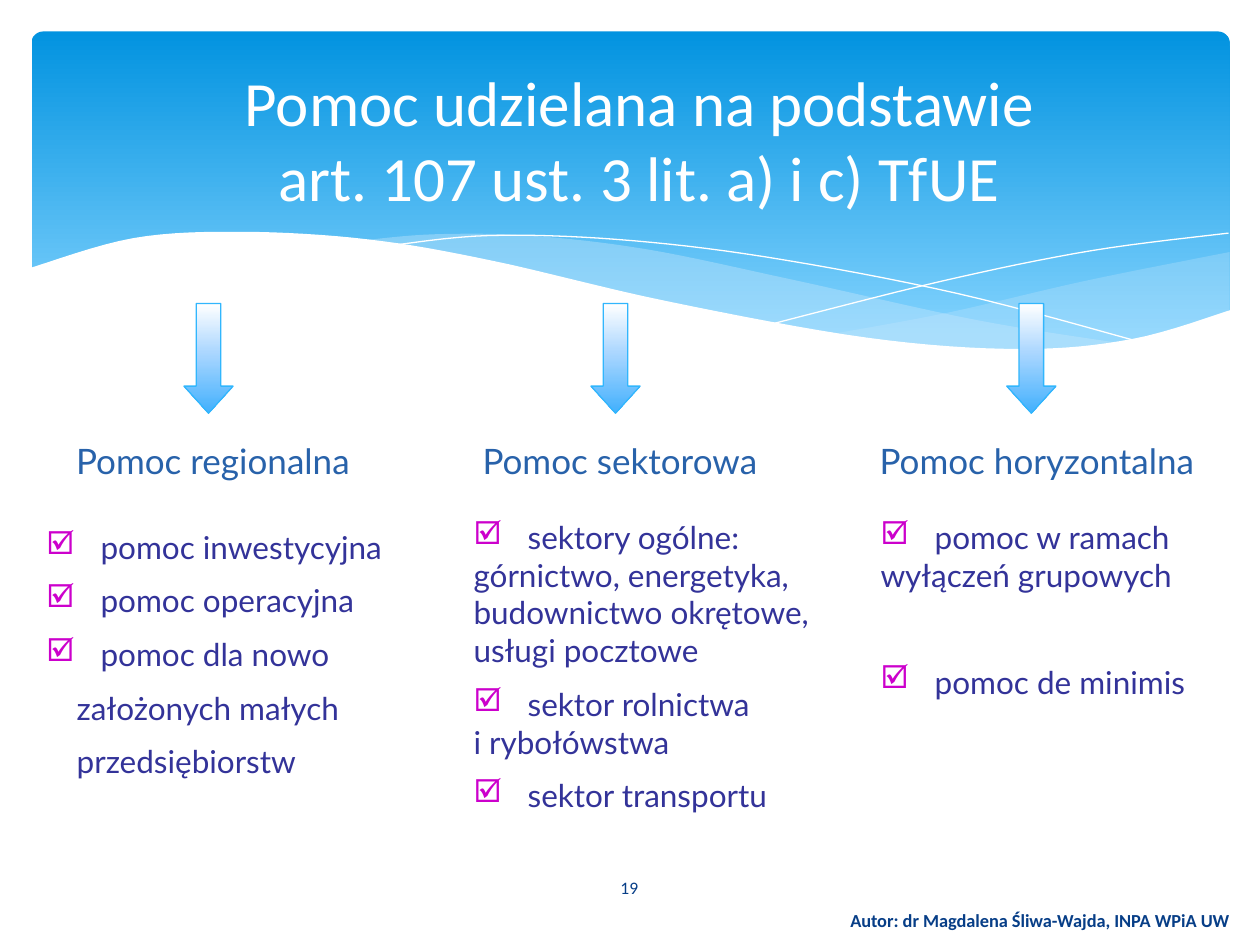
from dataclasses import dataclass
from typing import Optional

from lxml import etree
from pptx import Presentation
from pptx.dml.color import RGBColor
from pptx.enum.shapes import MSO_SHAPE
from pptx.enum.text import MSO_ANCHOR, PP_ALIGN
from pptx.oxml.ns import qn
from pptx.util import Inches, Pt

CENTER, LEFT = PP_ALIGN.CENTER, PP_ALIGN.LEFT
MIDDLE, TOP = MSO_ANCHOR.MIDDLE, MSO_ANCHOR.TOP
ROUNDED, DOWN_ARROW = MSO_SHAPE.ROUNDED_RECTANGLE, MSO_SHAPE.DOWN_ARROW
CURVE_STEPS = 8


@dataclass(frozen=True)
class Theme:
    white: str = "FFFFFF"
    wave: str = "C6E7FC"
    navy: str = "073E87"
    heading: str = "2862AA"
    body: str = "333399"
    check: str = "CC00CC"
    arrow_line: str = "31B6FD"
    banner: tuple = ((0, "0293E0"), (90, "83D3FE"))
    arrow: tuple = ((0, "FFFFFF"), (44, "ACD7FF"), (100, "42B0FD"))
    title_size: float = 36
    heading_size: float = 20
    body_size: float = 18
    author_size: float = 10.5
    number_size: float = 10
    main_font: str = "Calibri"
    list_font: str = "Lato"


@dataclass(frozen=True)
class Wave:
    """Smooth edges through knots in inches; opacity is a percentage."""
    edges: tuple
    fill: Optional[str] = None
    opacity: int = 100


@dataclass(frozen=True)
class Item:
    text: str
    checked: bool = True
    before: float = 9


@dataclass(frozen=True)
class Column:
    heading: str
    heading_left: float
    heading_width: float
    arrow_left: float
    list_left: float
    list_top: float
    list_width: float
    items: tuple


THEME = Theme()

WAVES = (
    Wave((((9.76, 2), (8.61, 2.23), (7.53, 2.48), (6.61, 2.65)),
          ((6.61, 2.65), (7.45, 2.75), (8.35, 2.77), (9.13, 2.67), (9.76, 2.47))),
         THEME.wave, 29),
    Wave((((8.93, 2.73), (7.75, 2.54), (6.29, 2.22), (5.14, 1.98), (4.2, 1.87), (3.44, 1.86),
           (2.86, 1.91)),
          ((2.86, 1.91), (4.04, 2.11), (5.66, 2.48), (6.95, 2.7), (7.96, 2.78), (8.93, 2.73))),
         THEME.wave, 40),
    Wave((((3.09, 1.95), (3.87, 1.87), (4.89, 1.9), (6.08, 2.04), (7.6, 2.33), (9.07, 2.72)),)),
    Wave((((6.13, 2.57), (7.48, 2.23), (8.66, 1.99), (9.75, 1.85)),)),
    Wave((((9.77, 2.46), (8.99, 2.69), (8.09, 2.77), (6.88, 2.68), (5.29, 2.39), (3.91, 2.07),
           (2.92, 1.9), (1.93, 1.84), (1.06, 1.89), (0.23, 2.13)),
          ((0.23, 3.29), (9.77, 3.29))), THEME.white),
)

COLUMNS = (
    Column("Pomoc regionalna", 0.35, 2.68, 1.46, 0.27, 4.14, 4.25, (
        Item("pomoc inwestycyjna"),
        Item("pomoc operacyjna"),
        Item("pomoc dla nowo"),
        Item("założonych małych", checked=False),
        Item("przedsiębiorstw", checked=False))),
    Column("Pomoc sektorowa", 3.66, 2.52, 4.69, 3.66, 4.06, 2.91, (
        Item("sektory ogólne: górnictwo, energetyka, budownictwo okrętowe, usługi pocztowe"),
        Item("sektor rolnictwa\ni rybołówstwa"),
        Item("sektor transportu"))),
    Column("Pomoc horyzontalna", 6.81, 2.84, 7.99, 6.89, 4.06, 2.84, (
        Item("pomoc w ramach wyłączeń grupowych"),
        Item("pomoc de minimis", before=39.6))),
)


def rgb(color: str) -> RGBColor:
    return RGBColor.from_string(color)


def set_gradient(shape, stops: tuple) -> None:
    """Top-to-bottom gradient with any number of stops."""
    shape.fill.gradient()
    shape.fill.gradient_angle = 270
    stop_list = shape.element.spPr.find(".//" + qn("a:gsLst"))
    for old in list(stop_list):
        stop_list.remove(old)
    for percent, color in stops:
        stop = etree.SubElement(stop_list, qn("a:gs"), pos=str(percent * 1000))
        etree.SubElement(stop, qn("a:srgbClr"), val=color)


def smooth(knots: tuple) -> list:
    """Points of a Catmull-Rom curve through the knots, in slide units."""
    padded = (knots[0], *knots, knots[-1])
    points = [tuple(Inches(value) for value in knots[0])]
    for before, start, end, after in zip(padded, padded[1:], padded[2:], padded[3:]):
        for step in range(1, CURVE_STEPS + 1):
            t = step / CURVE_STEPS
            points.append(tuple(
                Inches(b + ((c - a) * t + (2 * a - 5 * b + 4 * c - d) * t ** 2
                            + (3 * b - a - 3 * c + d) * t ** 3) / 2)
                for a, b, c, d in zip(before, start, end, after)))
    return points


def draw_wave(page, wave: Wave) -> None:
    points = [point for edge in wave.edges for point in smooth(edge)]
    builder = page.shapes.build_freeform(*points[0])
    builder.add_line_segments(points[1:], close=wave.fill is not None)
    shape = builder.convert_to_shape()
    shape.shadow.inherit = False
    if wave.fill is None:
        shape.fill.background()
        shape.line.color.rgb = rgb(THEME.white)
        shape.line.width = Pt(0)
        return
    shape.line.fill.background()
    shape.fill.solid()
    shape.fill.fore_color.rgb = rgb(wave.fill)
    if wave.opacity < 100:
        color = shape.element.spPr.find(qn("a:solidFill")).find(qn("a:srgbClr"))
        etree.SubElement(color, qn("a:alpha"), val=str(wave.opacity * 1000))


def draw_preset(page, kind, left: float, top: float, width: float, height: float, stops: tuple):
    shape = page.shapes.add_shape(kind, Inches(left), Inches(top), Inches(width), Inches(height))
    shape.shadow.inherit = False
    set_gradient(shape, stops)
    shape.line.fill.background()
    return shape


def add_text(para, text: str, size: float, color: str, font: str, bold: bool = False) -> None:
    for index, line in enumerate(text.split("\n")):
        if index:
            para.add_line_break()
        span = para.add_run()
        span.text = line
        span.font.size, span.font.name, span.font.bold = Pt(size), font, bold
        span.font.color.rgb = rgb(color)


def add_box(page, left: float, top: float, width: float, height: float, anchor=TOP):
    box = page.shapes.add_textbox(Inches(left), Inches(top), Inches(width), Inches(height))
    box.text_frame.word_wrap = True
    box.text_frame.vertical_anchor = anchor
    return box.text_frame


def add_label(page, place: tuple, text: str, style: tuple, align=CENTER, anchor=TOP) -> None:
    para = add_box(page, *place, anchor).paragraphs[0]
    para.alignment = align
    add_text(para, text, *style)


def set_check_bullet(para) -> None:
    """Coloured check box, then a tab stop where the text begins."""
    props = para._p.get_or_add_pPr()
    props.set("marL", "0")
    props.set("indent", "0")
    color = etree.SubElement(props, qn("a:buClr"))
    etree.SubElement(color, qn("a:srgbClr"), val=THEME.check)
    etree.SubElement(props, qn("a:buChar"), char="☑")
    tabs = etree.SubElement(props, qn("a:tabLst"))
    etree.SubElement(tabs, qn("a:tab"), pos=str(Inches(0.43)), algn="l")


def draw_column(page, column: Column) -> None:
    arrow = draw_preset(page, DOWN_ARROW, column.arrow_left, 2.41, 0.39, 0.87, THEME.arrow)
    arrow.adjustments[1] = 0.55
    arrow.line.color.rgb = rgb(THEME.arrow_line)
    arrow.line.width = Pt(0.75)
    add_label(page, (column.heading_left, 3.44, column.heading_width, 0.43), column.heading,
              (THEME.heading_size, THEME.heading, THEME.list_font))
    frame = add_box(page, column.list_left, column.list_top, column.list_width, 2.21)
    for index, item in enumerate(column.items):
        para = frame.add_paragraph() if index else frame.paragraphs[0]
        if index:
            para.space_before = Pt(item.before)
        if item.checked:
            set_check_bullet(para)
        else:
            para._p.get_or_add_pPr().set("marL", str(Inches(0.24)))
        prefix = "\t" if item.checked else ""
        add_text(para, prefix + item.text, THEME.body_size, THEME.body, THEME.list_font)


def main() -> None:
    deck = Presentation()
    deck.slide_width, deck.slide_height = Inches(10), Inches(7.5)
    page = deck.slides.add_slide(deck.slide_layouts[5])

    # Banner with waves
    banner = draw_preset(page, ROUNDED, 0.25, 0.25, 9.51, 2.7, THEME.banner)
    banner.adjustments[0] = 0.034
    for wave in WAVES:
        draw_wave(page, wave)

    # Title, brought in front of the banner
    title = page.shapes.title
    title.element.getparent().append(title.element)
    title.left, title.top, title.width, title.height = map(Inches, (0.5, 0.5, 9.15, 1.2))
    title.text_frame.vertical_anchor = MIDDLE
    para = title.text_frame.paragraphs[0]
    para.alignment = CENTER
    add_text(para, "Pomoc udzielana na podstawie\nart. 107 ust. 3 lit. a) i c) TfUE",
             THEME.title_size, THEME.white, THEME.main_font)

    # Three kinds of aid
    for column in COLUMNS:
        draw_column(page, column)

    # Footer
    add_label(page, (4.36, 6.84, 1.27, 0.4), "19",
              (THEME.number_size, THEME.navy, THEME.main_font), anchor=MIDDLE)
    add_label(page, (6.65, 7.1, 3.3, 0.4), "Autor: dr Magdalena Śliwa-Wajda, INPA WPiA UW",
              (THEME.author_size, THEME.navy, THEME.main_font, True), LEFT, MIDDLE)
    deck.save("out.pptx")


if __name__ == "__main__":
    main()
